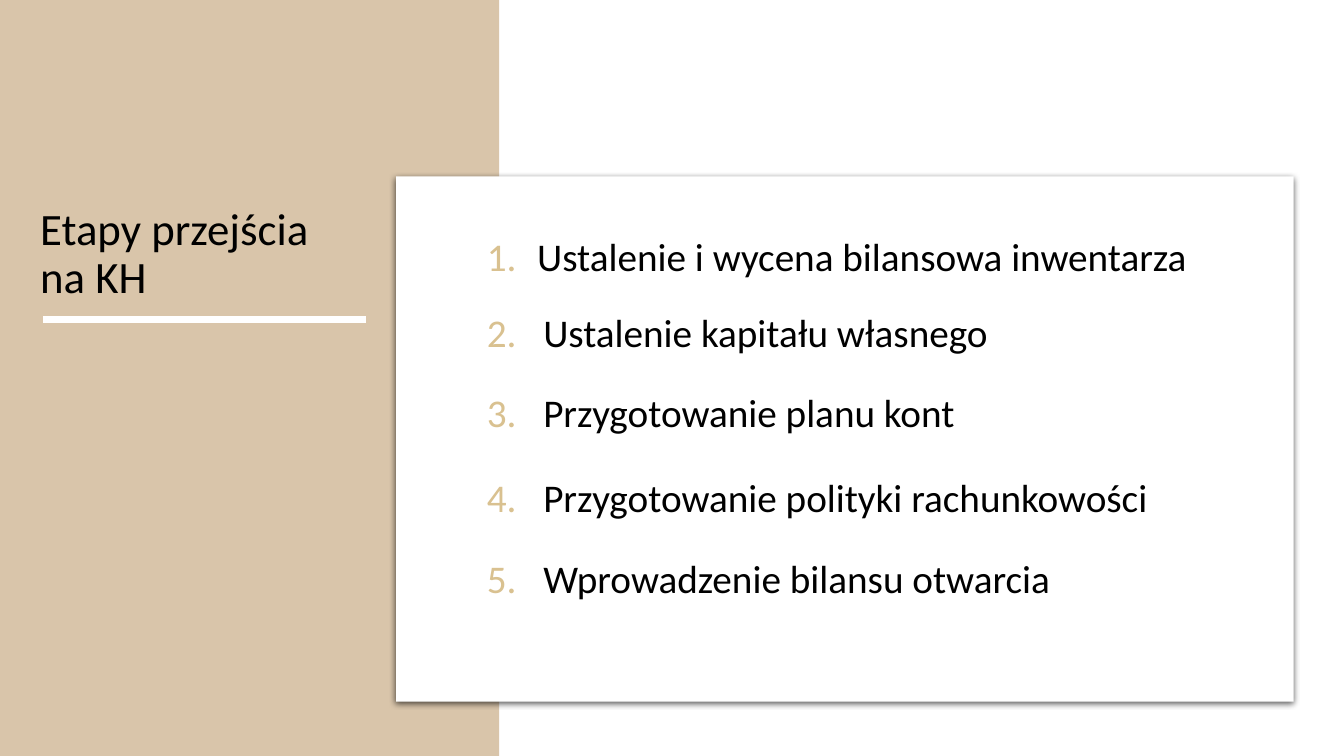
"""Build the slide on the stages of moving to full accounting."""
from dataclasses import dataclass

import pptx
import pptx.dml.color
import pptx.enum.shapes
import pptx.enum.text
import pptx.oxml
import pptx.oxml.ns
import pptx.util

Inches = pptx.util.Inches
Pt = pptx.util.Pt


@dataclass(frozen=True)
class Theme:
    """Hold the colours, font and type sizes."""
    sand: str = "D9C5AA"
    gold: str = "D9C190"
    white: str = "FFFFFF"
    black: str = "000000"
    font: str = "Calibri"
    title: int = 32
    step: int = 28
    rule: float = 4.5


THEME = Theme()
STEPS = [
    (2.31, 1, "Ustalenie i wycena bilansowa inwentarza"),
    (3.06, 1.06, "Ustalenie kapitału własnego"),
    (3.86, 1.06, "Przygotowanie planu kont"),
    (4.7, 1.06, "Przygotowanie polityki rachunkowości"),
    (5.5, 1.06, "Wprowadzenie bilansu otwarcia"),
]


def color(code):
    """Turn a hex code into a colour."""
    return pptx.dml.color.RGBColor.from_string(code)


def node(xml):
    """Parse one drawing element."""
    head, sep, tail = xml.partition(">")
    cut = len(head) - head.endswith("/")
    space = " " + pptx.oxml.ns.nsdecls("a")
    return pptx.oxml.parse_xml(head[:cut] + space + head[cut:] + sep + tail)


def add_box(slide, left, top, width, height, fill):
    """Add a plain filled rectangle."""
    box = slide.shapes.add_shape(
        pptx.enum.shapes.MSO_SHAPE.RECTANGLE,
        Inches(left), Inches(top), Inches(width), Inches(height))
    box.shadow.inherit = False
    box.fill.solid()
    box.fill.fore_color.rgb = color(fill)
    box.line.fill.background()
    return box


def add_shade(box):
    """Give a box a soft shadow below it."""
    effects = box._element.spPr.find(pptx.oxml.ns.qn("a:effectLst"))
    effects.append(node(
        f'<a:outerShdw blurRad="{Pt(4.5)}" dist="{Pt(1.5)}" dir="5400000" '
        f'algn="ctr" rotWithShape="0"><a:srgbClr val="{THEME.black}">'
        '<a:alpha val="63000"/></a:srgbClr></a:outerShdw>'))


def add_text(slide, left, top, width, height, text, size, before):
    """Add a wrapped text box and return its paragraph."""
    box = slide.shapes.add_textbox(
        Inches(left), Inches(top), Inches(width), Inches(height))
    frame = box.text_frame
    frame.word_wrap = True
    frame.vertical_anchor = pptx.enum.text.MSO_ANCHOR.TOP
    frame.text = text
    para = frame.paragraphs[0]
    para.line_spacing = 0.9
    para.space_before = Pt(before)
    font = para.runs[0].font
    font.name = THEME.font
    font.size = Pt(size)
    font.color.rgb = color(THEME.black)
    return para


def add_step(slide, top, indent, number, text):
    """Add one numbered step with a hanging indent."""
    para = add_text(slide, 4.23, top, 8.19, 0.55, text, THEME.step, 5)
    para.level = 1
    props = para._p.get_or_add_pPr()
    props.set("marL", str(Inches(indent)))
    props.set("indent", str(Inches(0.5 - indent)))
    props.append(node(
        f'<a:buClr><a:srgbClr val="{THEME.gold}"/></a:buClr>'))
    props.append(node(
        f'<a:buAutoNum type="arabicPeriod" startAt="{number}"/>'))


def add_rule(slide, left, right, top):
    """Add the level line under the title."""
    rule = slide.shapes.add_connector(
        pptx.enum.shapes.MSO_CONNECTOR.STRAIGHT,
        Inches(left), Inches(top), Inches(right), Inches(top))
    rule.line.color.rgb = color(THEME.white)
    rule.line.width = Pt(THEME.rule)
    rule._element.spPr.append(node("<a:effectLst/>"))


def main():
    """Draw the slide and save it."""
    deck = pptx.Presentation()
    deck.slide_width = Inches(13.33)
    deck.slide_height = Inches(7.5)
    slide = deck.slides.add_slide(deck.slide_layouts[6])
    add_box(slide, 0, -0.21, 4.95, 8.11, THEME.sand)
    add_shade(add_box(slide, 3.93, 1.75, 8.9, 5.21, THEME.white))
    add_text(slide, 0.3, 2, 3.32, 1.17, "Etapy przejścia na KH",
             THEME.title, 10)
    add_rule(slide, 0.43, 3.63, 3.17)
    for number, (top, indent, text) in enumerate(STEPS, 1):
        add_step(slide, top, indent, number, text)
    deck.save("out.pptx")


if __name__ == "__main__":
    main()
